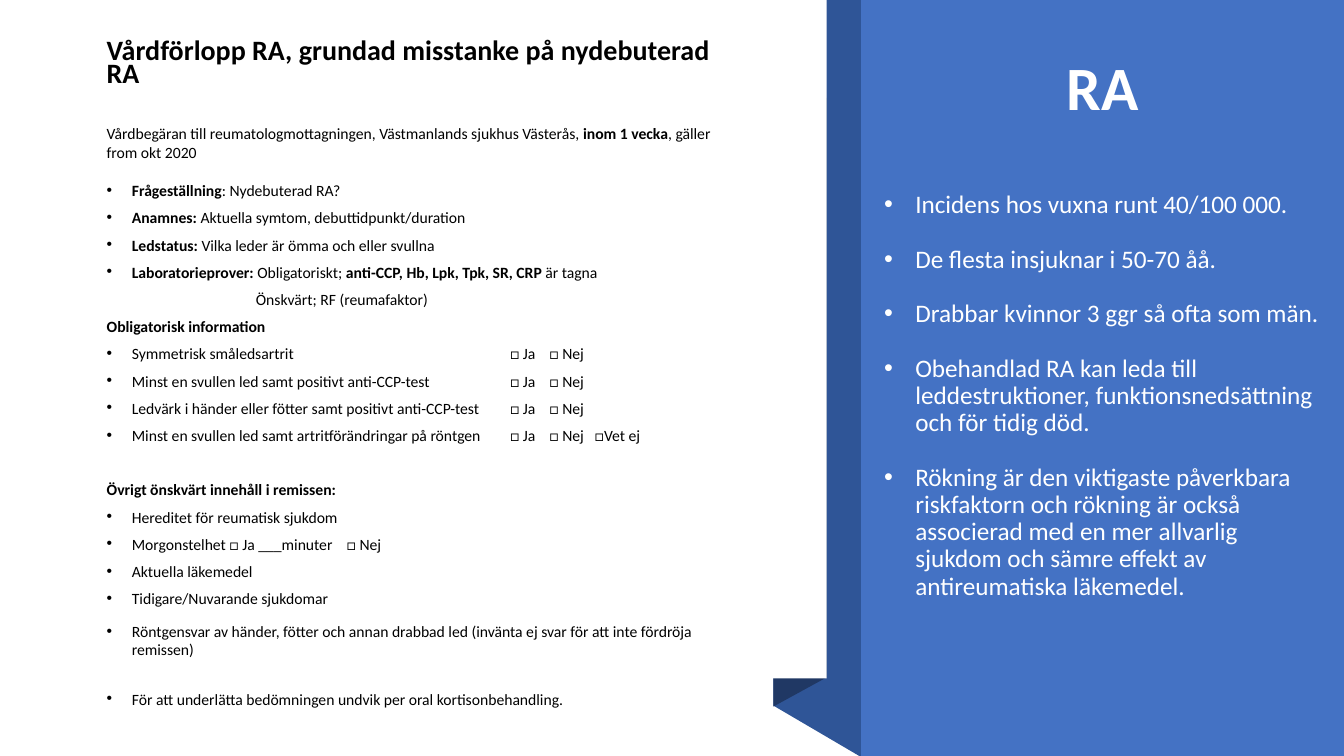
import dataclasses

import pptx
import pptx.dml.color
import pptx.enum.shapes
import pptx.enum.text
import pptx.oxml.ns
import pptx.util
from lxml import etree

Inches = pptx.util.Inches
Pt = pptx.util.Pt
RGBColor = pptx.dml.color.RGBColor
Align = pptx.enum.text.PP_ALIGN
Anchor = pptx.enum.text.MSO_ANCHOR

WHITE = RGBColor(0xFF, 0xFF, 0xFF)
BLACK = RGBColor(0x00, 0x00, 0x00)
BLUE = RGBColor(0x44, 0x72, 0xC4)
RIBBON_BLUE = RGBColor(0x2F, 0x55, 0x97)
FOLD_BLUE = RGBColor(0x20, 0x38, 0x64)

ANSWER_TABS = (4.0, 4.39, 4.84)


@dataclasses.dataclass
class Line:
    """One paragraph; text between ** marks is bold."""
    text: str
    bullet: bool = True
    before: float = 10
    spacing: float = 0.7
    size: float = 11.2
    indent: float = 0.25
    tabs: tuple[float, ...] = ()
    align: Align = Align.LEFT


@dataclasses.dataclass
class Panel:
    left: float
    top: float
    width: float
    height: float
    color: RGBColor
    anchor: Anchor
    lines: list[Line]


@dataclasses.dataclass
class Outline:
    points: list[tuple[float, float]]
    color: RGBColor


def fact(text: str, before: float = 19.5) -> Line:
    return Line(text, before=before, spacing=0.9, size=18, indent=0.31)


def question(text: str, answers: str = "□ Ja\t□ Nej") -> Line:
    return Line(f"{text}\t{answers}", tabs=ANSWER_TABS)


RIBBON = Outline([(7.68, 0), (8.54, 0), (8.54, 7.51), (7.67, 7), (7.67, 1.26), (7.68, 1.26)], RIBBON_BLUE)
FOLD = Outline([(8.2, 6.72), (7.67, 7.01), (7.67, 1.25), (8.2, 0.97)], FOLD_BLUE)

REFERRAL = Panel(0.96, 0.36, 6.29, 6.79, BLACK, Anchor.TOP, [
    Line("**Vårdförlopp RA, grundad misstanke på nydebuterad RA**", bullet=False, before=0, size=20),
    Line("Vårdbegäran till reumatologmottagningen, Västmanlands sjukhus Västerås, "
         "**inom 1 vecka**, gäller from okt 2020", bullet=False, before=25.5, spacing=1),
    Line("**Frågeställning**: Nydebuterad RA?", before=17.6),
    Line("**Anamnes:** Aktuella symtom, debuttidpunkt/duration"),
    Line("**Ledstatus:** Vilka leder är ömma och eller svullna"),
    Line("**Laboratorieprover: **Obligatoriskt; **anti-CCP, Hb, Lpk, Tpk, SR, CRP** är tagna"),
    Line("Önskvärt; RF (reumafaktor)", bullet=False, indent=1.48),
    Line("**Obligatorisk information**", bullet=False),
    question("Symmetrisk småledsartrit"),
    question("Minst en svullen led samt positivt anti-CCP-test"),
    question("Ledvärk i händer eller fötter samt positivt anti-CCP-test"),
    question("Minst en svullen led samt artritförändringar på röntgen", "□ Ja\t□ Nej\t□Vet ej"),
    Line("**Övrigt önskvärt innehåll i remissen:**", bullet=False, before=29.5),
    Line("Hereditet för reumatisk sjukdom"),
    Line("Morgonstelhet □ Ja ___minuter\t□ Nej", tabs=(2.38,)),
    Line("Aktuella läkemedel"),
    Line("Tidigare/Nuvarande sjukdomar"),
    Line("Röntgensvar av händer, fötter och annan drabbad led "
         "(invänta ej svar för att inte fördröja remissen)", spacing=1),
    Line("För att underlätta bedömningen undvik per oral kortisonbehandling.", before=25.5),
])

FACTS = Panel(8.67, -0.19, 4.54, 6.91, WHITE, Anchor.MIDDLE, [
    Line("**RA**", bullet=False, before=0, spacing=0.9, size=44, align=Align.CENTER),
    fact("Incidens hos vuxna runt 40/100 000.", before=48.3),
    fact("De flesta insjuknar i 50-70 åå."),
    fact("Drabbar kvinnor 3 ggr så ofta som män."),
    fact("Obehandlad RA kan leda till leddestruktioner, funktionsnedsättning och för tidig död."),
    fact("Rökning är den viktigaste påverkbara riskfaktorn och rökning är också associerad med "
         "en mer allvarlig sjukdom och sämre effekt av antireumatiska läkemedel."),
])


def apply_format(target: object, values: dict[str, object]) -> None:
    for name, value in values.items():
        setattr(target, name, value)


def paint(shape, color: RGBColor) -> None:
    shape.shadow.inherit = False
    shape.fill.solid()
    shape.fill.fore_color.rgb = color
    shape.line.fill.background()


def draw_outline(page, outline: Outline) -> None:
    points = [(Inches(x), Inches(y)) for x, y in outline.points]
    builder = page.shapes.build_freeform(*points[0])
    builder.add_line_segments(points[1:], close=True)
    paint(builder.convert_to_shape(), outline.color)


def draw_block(page, left: float, width: float, height: float, color: RGBColor) -> None:
    block = page.shapes.add_shape(pptx.enum.shapes.MSO_SHAPE.RECTANGLE,
                                  Inches(left), 0, Inches(width), Inches(height))
    paint(block, color)


def set_layout(para, line: Line) -> None:
    """Indent, bullet and tab stops."""
    qn = pptx.oxml.ns.qn
    properties = para._p.get_or_add_pPr()
    if line.bullet:
        properties.set("marL", str(Inches(line.indent)))
        properties.set("indent", str(-Inches(line.indent)))
        etree.SubElement(properties, qn("a:buFont"), typeface="Arial")
        etree.SubElement(properties, qn("a:buChar"), char="•")
    elif line.indent > 1:
        properties.set("marL", str(Inches(line.indent)))
    if line.tabs:
        stops = etree.SubElement(properties, qn("a:tabLst"))
        for position in line.tabs:
            etree.SubElement(stops, qn("a:tab"), pos=str(Inches(position)), algn="l")


def write_line(para, line: Line, color: RGBColor) -> None:
    set_layout(para, line)
    apply_format(para, {"alignment": line.align, "line_spacing": line.spacing,
                        "space_before": Pt(line.before), "space_after": Pt(0)})
    for index, text in enumerate(line.text.split("**")):
        if text:
            span = para.add_run()
            span.text = text
            apply_format(span.font, {"name": "Calibri", "size": Pt(line.size), "bold": index % 2 == 1})
            span.font.color.rgb = color


def draw_panel(page, panel: Panel) -> None:
    box = page.shapes.add_textbox(Inches(panel.left), Inches(panel.top),
                                  Inches(panel.width), Inches(panel.height))
    frame = box.text_frame
    apply_format(frame, {"word_wrap": True, "vertical_anchor": panel.anchor})
    for index, line in enumerate(panel.lines):
        para = frame.add_paragraph() if index else frame.paragraphs[0]
        write_line(para, line, panel.color)


def main() -> None:
    deck = pptx.Presentation()
    apply_format(deck, {"slide_width": Inches(13.33), "slide_height": Inches(7.5)})
    page = deck.slides.add_slide(deck.slide_layouts[6])

    # Folded ribbon, with the white sheet covering its upper part
    draw_outline(page, RIBBON)
    draw_outline(page, FOLD)
    draw_block(page, 0, 8.2, 6.73, WHITE)
    draw_block(page, 8.54, 4.79, 7.5, BLUE)

    # Referral text on the left, facts on the right
    draw_panel(page, REFERRAL)
    draw_panel(page, FACTS)
    deck.save("out.pptx")


if __name__ == "__main__":
    main()
